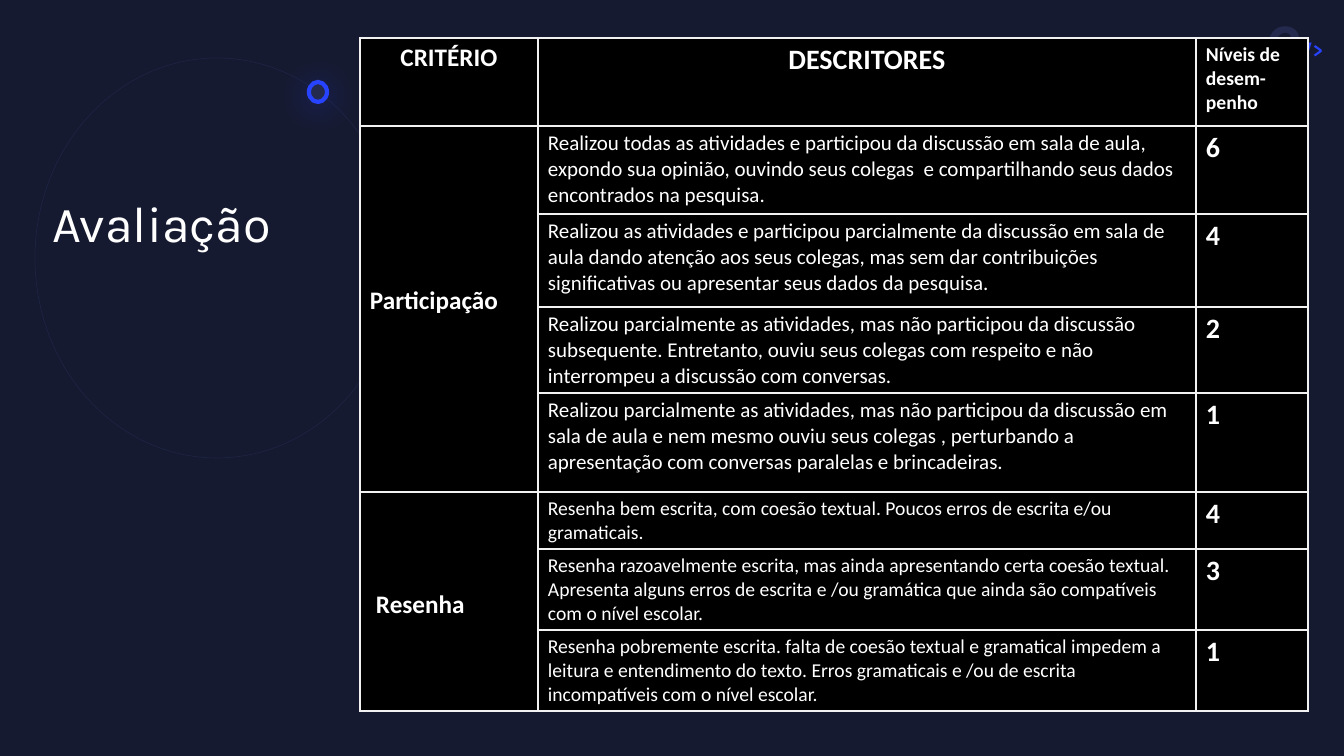
"""Builds the assessment rubric slide."""
from dataclasses import dataclass

from lxml import etree
from pptx import Presentation
from pptx.dml.color import RGBColor
from pptx.enum.shapes import MSO_SHAPE
from pptx.enum.text import MSO_ANCHOR, PP_ALIGN
from pptx.oxml.ns import qn
from pptx.util import Emu, Pt

OVAL = MSO_SHAPE.OVAL
LEFT, CENTER, RIGHT = PP_ALIGN.LEFT, PP_ALIGN.CENTER, PP_ALIGN.RIGHT
TOP, MIDDLE = MSO_ANCHOR.TOP, MSO_ANCHOR.MIDDLE


@dataclass(frozen=True)
class Theme:
    background: str = "161A30"
    muted: str = "232A4E"
    accent: str = "2843FF"
    text: str = "FFFFFF"
    cell: str = "000000"
    border: str = "F2F2F2"
    title_font: str = "Karla"
    table_font: str = "Calibri"
    title_size: int = 36
    criterion_size: int = 18
    level_size: int = 20


THEME = Theme()
TITLE = "Avaliação"
PAGE_MARK = [("<", 28, THEME.accent, 30), ("6", 44, THEME.muted, 0), ("/>", 24, THEME.accent, 30)]
HEADINGS = [("CRITÉRIO", 18, CENTER), ("DESCRITORES", 20, CENTER), ("Níveis de desem-penho", 14, LEFT)]
CRITERIA = [
    ("Participação", 15, (10, 5, 21), [
        ("Realizou todas as atividades e participou da discussão em sala de aula, expondo sua opinião, "
         "ouvindo seus colegas  e compartilhando seus dados encontrados na pesquisa.", 6),
        ("Realizou as atividades e participou parcialmente da discussão em sala de aula dando atenção aos "
         "seus colegas, mas sem dar contribuições significativas ou apresentar seus dados da pesquisa.", 4),
        ("Realizou parcialmente as atividades, mas não participou da discussão subsequente. Entretanto, "
         "ouviu seus colegas com respeito e não interrompeu a discussão com conversas.", 2),
        ("Realizou parcialmente as atividades, mas não participou da discussão em sala de aula e nem mesmo "
         "ouviu seus colegas , perturbando a apresentação com conversas paralelas e brincadeiras.", 1),
    ]),
    ("Resenha", 14, (16, 12, 5), [
        ("Resenha bem escrita, com coesão textual. Poucos erros de escrita e/ou gramaticais.", 4),
        ("Resenha razoavelmente escrita, mas ainda apresentando certa coesão textual. Apresenta alguns erros "
         "de escrita e /ou gramática que ainda são compatíveis com o nível escolar.", 3),
        ("Resenha pobremente escrita. falta de coesão textual e gramatical impedem a leitura e entendimento "
         "do texto. Erros gramaticais e /ou de escrita incompatíveis com o nível escolar.", 1),
    ]),
]
COLUMN_WIDTHS = [178, 658, 112]
ROW_HEIGHTS = [88, 88, 93, 86, 99, 57, 81, 81]
TABLE_LEFT, TABLE_TOP = 360, 38


def px(length):
    return Emu(round(length * 914400 / 100.8))


def box(*lengths):
    return [px(length) for length in lengths]


def rgb(colour):
    return RGBColor.from_string(colour)


def style(font, name, size, colour, bold=False):
    font.name, font.size, font.bold = name, Pt(size), bold
    font.color.rgb = rgb(colour)


def add_colour(parent, colour, opacity):
    node = etree.SubElement(parent, qn("a:srgbClr"), val=colour)
    etree.SubElement(node, qn("a:alpha"), val=str(opacity * 1000))


def add_page_mark(slide):
    frame = slide.shapes.add_textbox(*box(1076, 0, 257, 85)).text_frame
    frame.word_wrap = True
    frame.vertical_anchor = MIDDLE
    paragraph = frame.paragraphs[0]
    paragraph.alignment = RIGHT
    for text, size, colour, baseline in PAGE_MARK:
        run = paragraph.add_run()
        run.text = text
        style(run.font, THEME.title_font, size, colour, True)
        run._r.get_or_add_rPr().set("baseline", str(baseline * 1000))


def add_orbit(slide):
    orbit = slide.shapes.add_shape(OVAL, *box(35, 58, 364, 400))
    orbit.shadow.inherit = False
    orbit.fill.background()
    orbit.line.width = Pt(0.5)
    orbit.line.color.rgb = rgb(THEME.muted)
    line_colour = orbit.line._ln.find(".//" + qn("a:srgbClr"))
    etree.SubElement(line_colour, qn("a:alpha"), val="60000")

    planet = slide.shapes.add_shape(OVAL, *box(309, 82, 18, 20))
    planet.shadow.inherit = False
    planet.fill.solid()
    planet.fill.fore_color.rgb = rgb(THEME.muted)
    planet.line.width = Pt(3)
    planet.line.color.rgb = rgb(THEME.accent)
    effects = planet._element.spPr.find(qn("a:effectLst"))
    glow = etree.SubElement(effects, qn("a:outerShdw"), blurRad=str(Pt(24)), dist=str(Pt(3)), dir="5400000")
    add_colour(glow, THEME.accent, 40)


def add_title(slide):
    title = slide.shapes.title
    title.left, title.top, title.width, title.height = box(42, 187, 357, 72)
    title.text_frame.text = TITLE
    title.text_frame.vertical_anchor = TOP
    paragraph = title.text_frame.paragraphs[0]
    paragraph.alignment = LEFT
    style(paragraph.font, THEME.title_font, THEME.title_size, THEME.text)


def format_cell(cell):
    cell.fill.solid()
    cell.fill.fore_color.rgb = rgb(THEME.cell)
    properties = cell._tc.get_or_add_tcPr()
    for position, side in enumerate(("lnL", "lnR", "lnT", "lnB")):
        border = etree.Element(qn("a:" + side), w=str(Pt(1)))
        add_colour(etree.SubElement(border, qn("a:solidFill")), THEME.border, 100)
        properties.insert(position, border)


def write_cell(cell, text, size, bold=True, alignment=LEFT, margins=(10, 5, 5)):
    cell.text = text
    cell.margin_left, cell.margin_top, cell.margin_bottom = box(*margins)
    cell.margin_right = px(10)
    paragraph = cell.text_frame.paragraphs[0]
    paragraph.alignment = alignment
    style(paragraph.font, THEME.table_font, size, THEME.text, bold)


def add_rubric(slide):
    rubric = slide.shapes.add_table(
        len(ROW_HEIGHTS), len(COLUMN_WIDTHS),
        *box(TABLE_LEFT, TABLE_TOP, sum(COLUMN_WIDTHS), sum(ROW_HEIGHTS))).table
    for column, width in zip(rubric.columns, COLUMN_WIDTHS):
        column.width = px(width)
    for row, height in zip(rubric.rows, ROW_HEIGHTS):
        row.height = px(height)
    for cell in rubric.iter_cells():
        format_cell(cell)
    for column, (heading, size, alignment) in enumerate(HEADINGS):
        write_cell(rubric.cell(0, column), heading, size, alignment=alignment)
    first = 1
    for criterion, size, margins, descriptors in CRITERIA:
        criterion_cell = rubric.cell(first, 0)
        criterion_cell.merge(rubric.cell(first + len(descriptors) - 1, 0))
        write_cell(criterion_cell, criterion, THEME.criterion_size, margins=margins)
        criterion_cell.vertical_anchor = MIDDLE
        for row, (descriptor, level) in enumerate(descriptors, first):
            write_cell(rubric.cell(row, 1), descriptor, size, bold=False)
            write_cell(rubric.cell(row, 2), str(level), THEME.level_size)
        first += len(descriptors)


def main():
    deck = Presentation()
    deck.slide_width, deck.slide_height = box(1344, 756)
    slide = deck.slides.add_slide(deck.slide_layouts[5])
    slide.background.fill.solid()
    slide.background.fill.fore_color.rgb = rgb(THEME.background)
    add_page_mark(slide)
    add_orbit(slide)
    add_title(slide)
    add_rubric(slide)
    deck.save("out.pptx")


if __name__ == "__main__":
    main()
